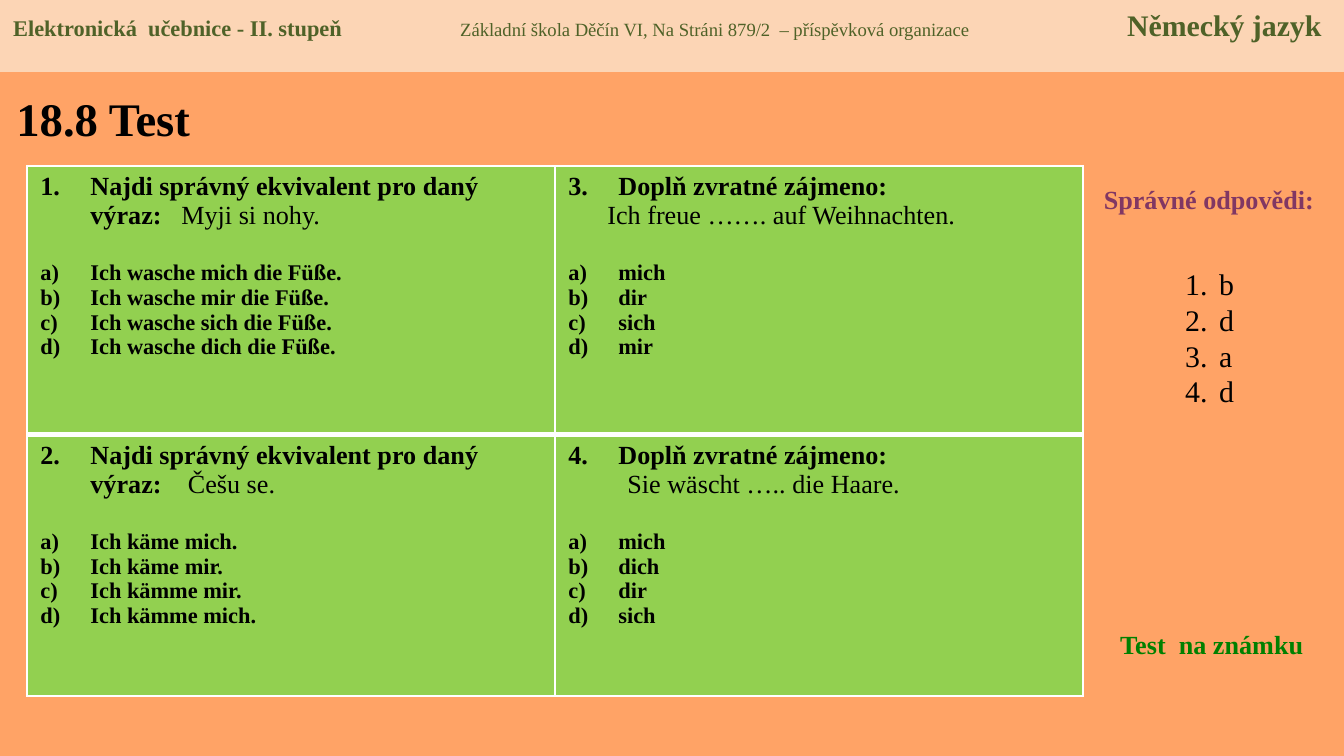
from lxml import etree
from pptx import Presentation
from pptx.dml.color import RGBColor
from pptx.enum.shapes import MSO_SHAPE as Shape
from pptx.enum.text import MSO_ANCHOR as Anchor, PP_ALIGN as Align
from pptx.oxml.ns import qn
from pptx.util import Pt

EMU_PER_PX = 914400 / 134.4
FONT = "Times New Roman"
BLACK, WHITE, OLIVE = "000000", "FFFFFF", "4F6228"
HANG = 50  # hanging indent of numbered lines in the table

HEADER = [("Elektronická  učebnice - II. stupeň", 12, True),
          ("\tZákladní škola Děčín VI, Na Stráni 879/2  – příspěvková organizace", 10, False),
          ("\tNěmecký jazyk", 16, True)]

TRANSLATE = "Najdi správný ekvivalent pro daný výraz:"
FILL_IN = "Doplň zvratné zájmeno:"

# number, task, sentence, indent of a sentence on its own line (None: same line),
# extra width of the space before the sentence in points, options
QUESTIONS = [
    [(1, TRANSLATE, "Myji si nohy.", None, 7,
      ["Ich wasche mich die Füße.", "Ich wasche mir die Füße.",
       "Ich wasche sich die Füße.", "Ich wasche dich die Füße."]),
     (3, FILL_IN, "Ich freue ……. auf Weihnachten.", 39, 0,
      ["mich", "dir", "sich", "mir"])],
    [(2, TRANSLATE, "Češu se.", None, 10.5,
      ["Ich käme mich.", "Ich käme mir.", "Ich kämme mir.", "Ich kämme mich."]),
     (4, FILL_IN, "Sie wäscht ….. die Haare.", 59, 0,
      ["mich", "dich", "dir", "sich"])],
]
ANSWERS = ["b", "d", "a", "d"]


def px(length):
    return round(length * EMU_PER_PX)


def box(*lengths):
    return [px(length) for length in lengths]


def color(hex_code):
    return RGBColor.from_string(hex_code)


def add_run(paragraph, text, size, bold=False, hex_code=BLACK):
    run = paragraph.add_run()
    run.text = text
    font = run.font
    font.name, font.size, font.bold = FONT, Pt(size), bold
    font.color.rgb = color(hex_code)
    return run


def next_paragraph(frame):
    first = frame.paragraphs[0]
    return frame.add_paragraph() if first.runs else first


def set_number(paragraph, kind, hang, start=1):
    props = paragraph._p.get_or_add_pPr()
    props.set("marL", str(px(hang)))
    props.set("indent", str(-px(hang)))
    number = etree.SubElement(props, qn("a:buAutoNum"), type=kind)
    if start > 1:
        number.set("startAt", str(start))


def add_label(slide, place, text, hex_code, align):
    frame = slide.shapes.add_textbox(*box(*place)).text_frame
    frame.word_wrap = True
    label = frame.paragraphs[0]
    label.alignment = align
    add_run(label, text, 14, True, hex_code)


def add_answers(slide):
    frame = slide.shapes.add_textbox(*box(1172, 259, 74, 160)).text_frame
    frame.word_wrap = True
    for answer in ANSWERS:
        line = next_paragraph(frame)
        set_number(line, "arabicPeriod", 34)
        add_run(line, answer, 16)


def add_header(slide):
    band = slide.shapes.add_shape(Shape.RECTANGLE, *box(0, 0, 1344, 72))
    band.shadow.inherit = False
    band.fill.solid()
    band.fill.fore_color.rgb = color("FCD5B5")
    band.line.fill.background()
    frame = band.text_frame
    frame.word_wrap = True
    frame.vertical_anchor = Anchor.TOP
    line = frame.paragraphs[0]
    line.alignment = Align.LEFT
    tabs = etree.SubElement(line._p.get_or_add_pPr(), qn("a:tabLst"))
    for stop in (447, 1114):
        etree.SubElement(tabs, qn("a:tab"), pos=str(px(stop)), algn="l")
    for text, size, bold in HEADER:
        add_run(line, text, size, bold, OLIVE)


def set_borders(cell, **widths):
    props = cell._tc.get_or_add_tcPr()
    for side in "LRTB":
        line = etree.SubElement(props, qn(f"a:ln{side}"), w=str(Pt(widths.get(side, 1))))
        fill = etree.SubElement(line, qn("a:solidFill"))
        etree.SubElement(fill, qn("a:srgbClr"), val=WHITE)


def fill_question(frame, number, task, sentence, indent, extra_space, options):
    line = next_paragraph(frame)
    set_number(line, "arabicPeriod", HANG, number)
    add_run(line, task, 14, True)
    if indent is None:
        gap = add_run(line, " ", 14, True)
        gap._r.get_or_add_rPr().set("spc", str(round(extra_space * 100)))
    else:
        line = next_paragraph(frame)
        line._p.get_or_add_pPr().set("marL", str(px(indent)))
    add_run(line, sentence, 14)
    for index, option in enumerate(options):
        line = next_paragraph(frame)
        set_number(line, "alphaLcParenR", HANG)
        if index == 0:
            line.space_before = Pt(16)
        add_run(line, option, 12, True)


def add_questions(slide):
    table = slide.shapes.add_table(2, 2, *box(27, 166, 1056, 530)).table
    table.first_row = table.horz_banding = False
    for column in table.columns:
        column.width = px(528)
    for row, height in zip(table.rows, (269, 261)):
        row.height = px(height)
    for r, questions in enumerate(QUESTIONS):
        for c, question in enumerate(questions):
            cell = table.cell(r, c)
            set_borders(cell, **({"B": 3} if r == 0 else {"T": 3}))
            cell.fill.solid()
            cell.fill.fore_color.rgb = color("92D050")
            fill_question(cell.text_frame, *question)


def set_title(slide, text):
    title = slide.shapes.title
    title.left, title.top, title.width, title.height = box(3, 74, 429, 87)
    frame = title.text_frame
    frame.vertical_anchor = Anchor.MIDDLE
    frame.paragraphs[0].alignment = Align.LEFT
    add_run(frame.paragraphs[0], text, 25, True)


def main():
    deck = Presentation()
    deck.slide_width, deck.slide_height = box(1344, 756)
    slide = deck.slides.add_slide(deck.slide_layouts[5])
    slide.background.fill.solid()
    slide.background.fill.fore_color.rgb = color("FFA366")

    set_title(slide, "18.8 Test")
    # Answer key beside the table
    add_label(slide, (1082, 177, 254, 46), "Správné odpovědi:", "813763", Align.CENTER)
    add_answers(slide)
    add_label(slide, (1107, 622, 211, 46), "Test  na známku", "008000", Align.LEFT)
    # Test questions and page header
    add_questions(slide)
    add_header(slide)
    deck.save("out.pptx")


if __name__ == "__main__":
    main()
